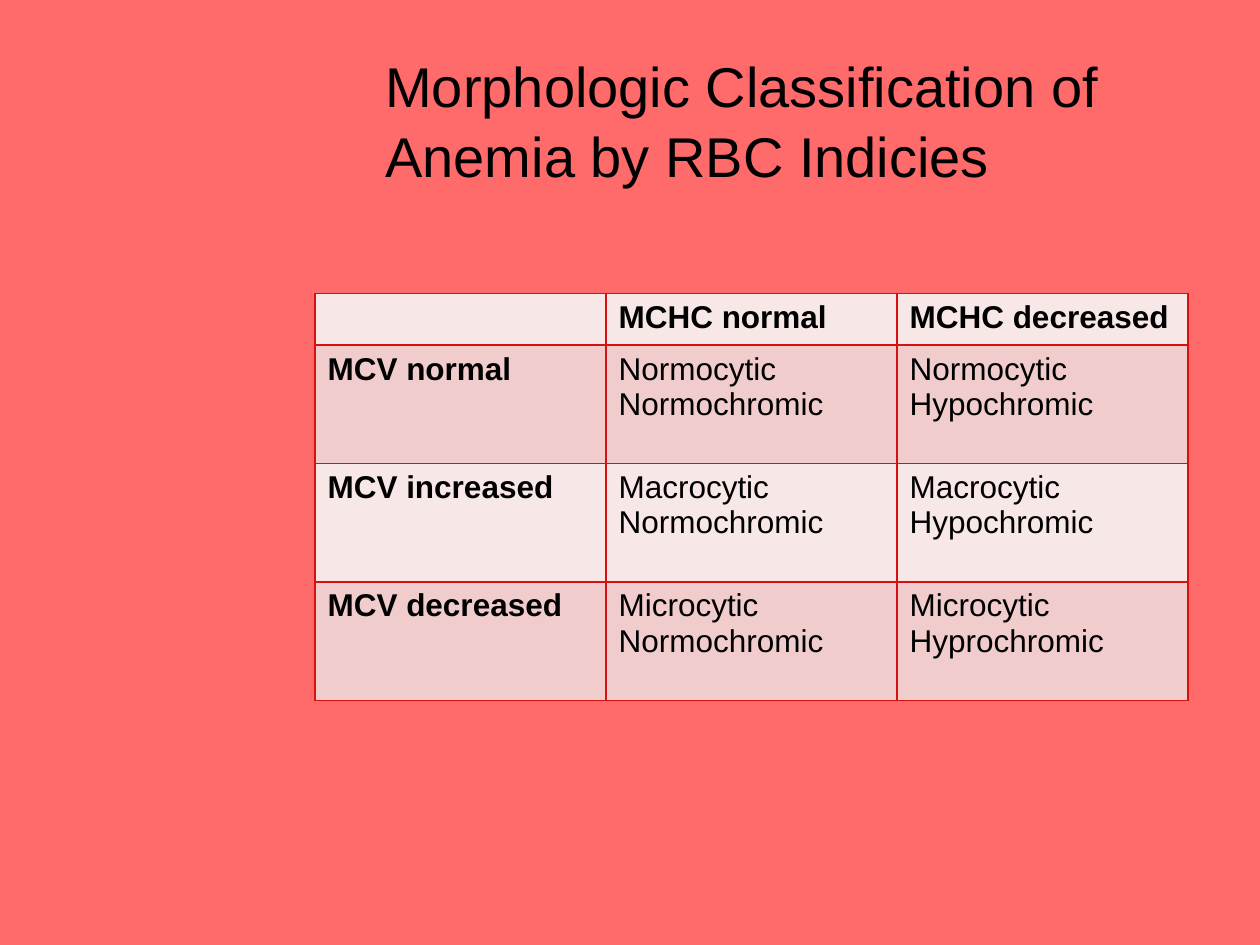
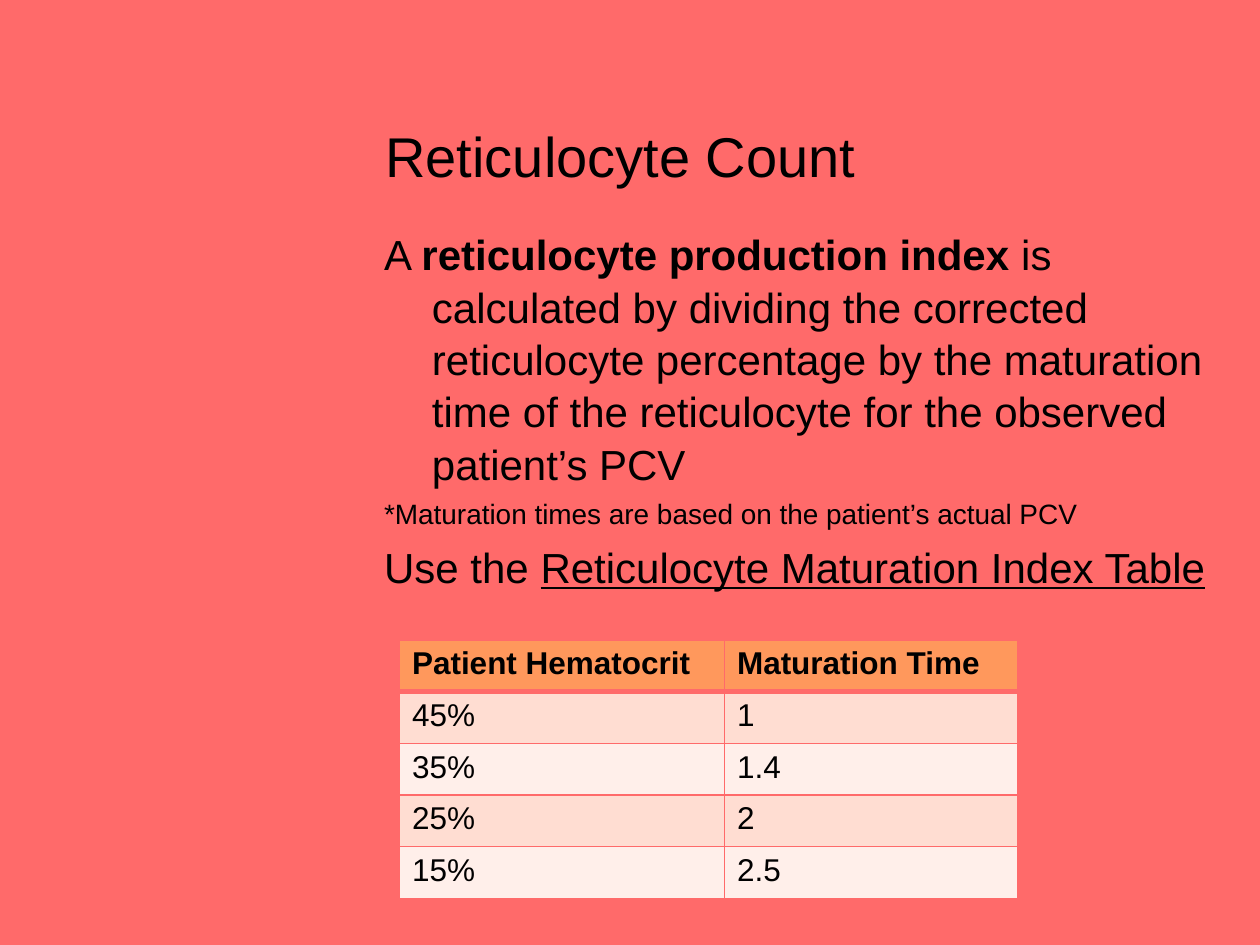
import pptx
import pptx.dml.color
import pptx.enum.text
import pptx.oxml
import pptx.oxml.ns
import pptx.util
from dataclasses import dataclass

Inches = pptx.util.Inches
Pt = pptx.util.Pt


@dataclass(frozen=True)
class Theme:
    font: str = "Arial"
    background: str = "FF6A6A"
    text: str = "000000"
    title_size: int = 32
    body_size: int = 24
    note_size: int = 16
    table_size: int = 18
    line_spacing: float = 1.04
    space_before: float = 0.23  # share of the type size
    hanging: float = 0.38


THEME = Theme()
TITLE_BOX = (2.96, 0.3, 6.91, 1.25)
BODY_BOX = (2.95, 1.75, 6.92, 4.95)

# Content: body paragraphs are (size, [(text, style), ...])
RETICULOCYTE_BODY = [
    (THEME.body_size, [
        ("A ", None),
        ("reticulocyte production index", "bold"),
        (" is calculated by dividing the corrected reticulocyte percentage by the "
         "maturation time of the reticulocyte for the observed patient’s PCV", None),
    ]),
    (THEME.note_size, [("*Maturation times are based on the patient’s actual PCV", None)]),
    (THEME.body_size, [
        ("Use the ", None),
        ("Reticulocyte Maturation Index Table", "underline"),
    ]),
]

# Each newline in a cell starts a paragraph
MORPHOLOGY_TABLE = {
    "rows": [
        ("", "MCHC normal", "MCHC decreased"),
        ("MCV normal", "Normocytic\nNormochromic", "Normocytic\nHypochromic"),
        ("MCV increased", "Macrocytic\nNormochromic", "Macrocytic\nHypochromic"),
        ("MCV decreased", "Microcytic\nNormochromic", "Microcytic\nHyprochromic"),
    ],
    "left": 2.5, "top": 2.33, "widths": (2.31, 2.31, 2.31),
    "header_height": 0.41, "row_height": 0.94,
    "header_fill": "F8E7E7", "band_fills": ("F1CCCC", "F8E7E7"),
    "border": "D91010", "header_rule": 1, "bold_first_column": True,
}
MATURATION_TABLE = {
    "rows": [
        ("Patient Hematocrit", "Maturation Time"),
        ("45%", "1"),
        ("35%", "1.4"),
        ("25%", "2"),
        ("15%", "2.5"),
    ],
    "left": 3.17, "top": 5.08, "widths": (2.58, 2.33),
    "header_height": 0.41, "row_height": 0.41,
    "header_fill": "FF985C", "band_fills": ("FFDDD2", "FFEFEA"),
    "border": THEME.background, "header_rule": 3, "bold_first_column": False,
}
SLIDES = [
    ("Morphologic Classification of Anemia by RBC Indicies", [], MORPHOLOGY_TABLE),
    ("Reticulocyte Count", RETICULOCYTE_BODY, MATURATION_TABLE),
]


def rgb(value):
    return pptx.dml.color.RGBColor.from_string(value)


def add_run(paragraph, text, size, style=None):
    run = paragraph.add_run()
    run.text = text
    run.font.name = THEME.font
    run.font.size = Pt(size)
    run.font.color.rgb = rgb(THEME.text)
    run.font.bold = style == "bold"
    run.font.underline = style == "underline"


def add_paragraphs(slide, box, paragraphs, anchor, hanging=0):
    frame = slide.shapes.add_textbox(*map(Inches, box)).text_frame
    frame.word_wrap = True
    frame.vertical_anchor = anchor
    for index, (size, runs) in enumerate(paragraphs):
        paragraph = frame.add_paragraph() if index else frame.paragraphs[0]
        paragraph.line_spacing = THEME.line_spacing
        if index:
            paragraph.space_before = Pt(round(size * THEME.space_before, 1))
        if hanging:
            properties = paragraph._p.get_or_add_pPr()
            properties.set("marL", str(Inches(hanging)))
            properties.set("indent", str(-Inches(hanging)))
        for text, style in runs:
            add_run(paragraph, text, size, style)


def set_borders(cell, color, widths):
    """Draw the cell edges; widths are in points, as left, right, top, bottom."""
    properties = cell._tc.get_or_add_tcPr()
    for index, (edge, width) in enumerate(zip(("lnL", "lnR", "lnT", "lnB"), widths)):
        line = pptx.oxml.parse_xml(
            f'<a:{edge} {pptx.oxml.ns.nsdecls("a")} w="{Pt(width)}"><a:solidFill>'
            f'<a:srgbClr val="{color}"/></a:solidFill></a:{edge}>')
        properties.insert(index, line)


def add_data_table(slide, data):
    rows, widths = data["rows"], data["widths"]
    heights = [data["header_height"]] + [data["row_height"]] * (len(rows) - 1)
    table = slide.shapes.add_table(
        len(rows), len(widths), Inches(data["left"]), Inches(data["top"]),
        Inches(sum(widths)), Inches(sum(heights))).table
    for column, width in zip(table.columns, widths):
        column.width = Inches(width)
    for row_index, (row, height) in enumerate(zip(rows, heights)):
        table.rows[row_index].height = Inches(height)
        band = data["band_fills"][(row_index - 1) % 2]
        fill = band if row_index else data["header_fill"]
        top_rule = data["header_rule"] if row_index == 1 else 1
        bottom_rule = data["header_rule"] if row_index == 0 else 1
        for column_index, text in enumerate(row):
            cell = table.cell(row_index, column_index)
            cell.fill.solid()
            cell.fill.fore_color.rgb = rgb(fill)
            set_borders(cell, data["border"], (1, 1, top_rule, bottom_rule))
            is_heading = row_index == 0 or (data["bold_first_column"] and column_index == 0)
            frame = cell.text_frame
            for line_index, line in enumerate(text.split("\n") if text else []):
                paragraph = frame.add_paragraph() if line_index else frame.paragraphs[0]
                add_run(paragraph, line, THEME.table_size, "bold" if is_heading else None)


def main():
    presentation = pptx.Presentation()
    presentation.slide_width = Inches(10)
    presentation.slide_height = Inches(7.5)
    anchors = pptx.enum.text.MSO_ANCHOR
    for title, body, table in SLIDES:
        slide = presentation.slides.add_slide(presentation.slide_layouts[6])
        slide.background.fill.solid()
        slide.background.fill.fore_color.rgb = rgb(THEME.background)
        # Title, optional body text, then the table
        title_paragraphs = [(THEME.title_size, [(title, None)])]
        add_paragraphs(slide, TITLE_BOX, title_paragraphs, anchors.BOTTOM)
        if body:
            add_paragraphs(slide, BODY_BOX, body, anchors.TOP, THEME.hanging)
        add_data_table(slide, table)
    presentation.save("out.pptx")


if __name__ == "__main__":
    main()
